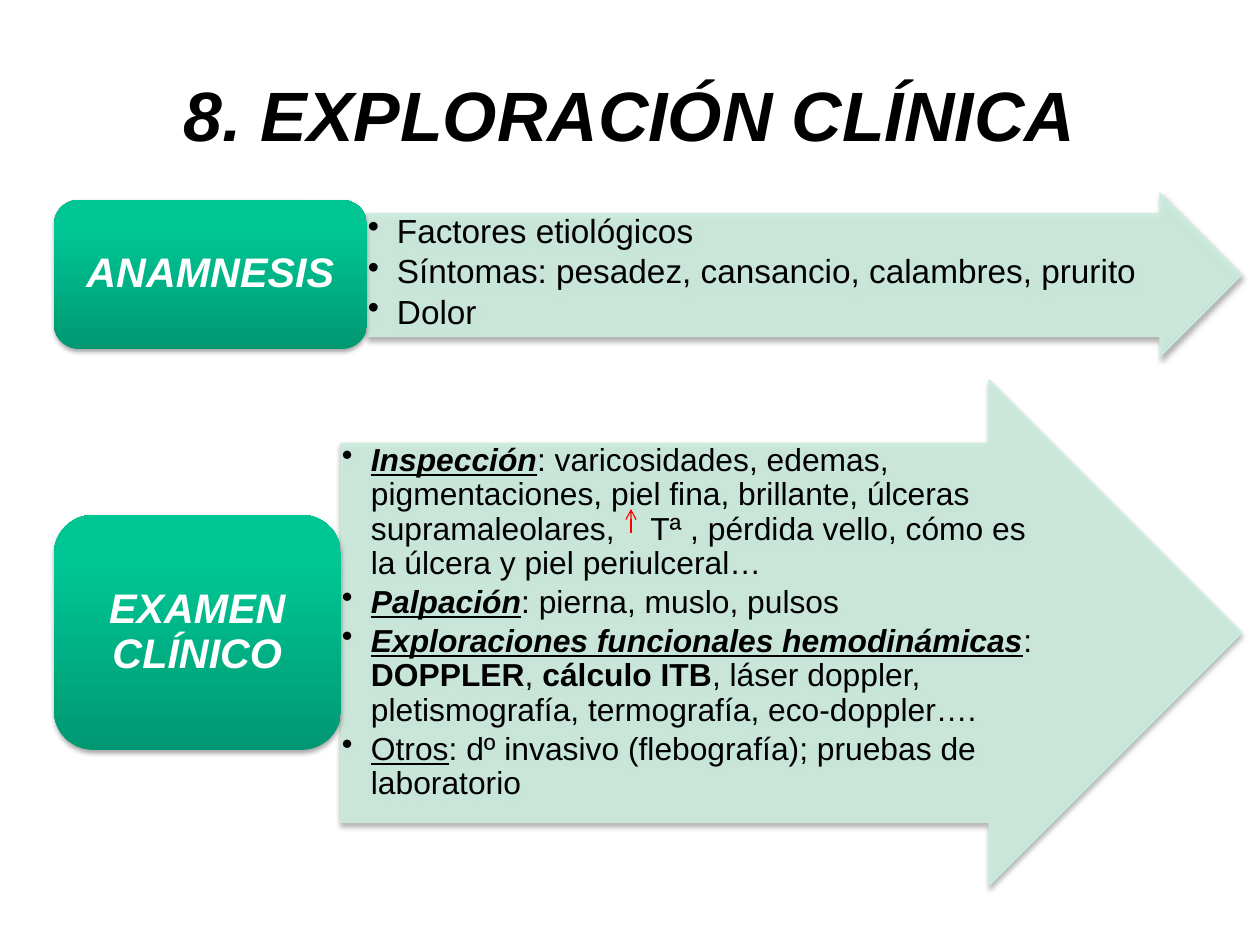
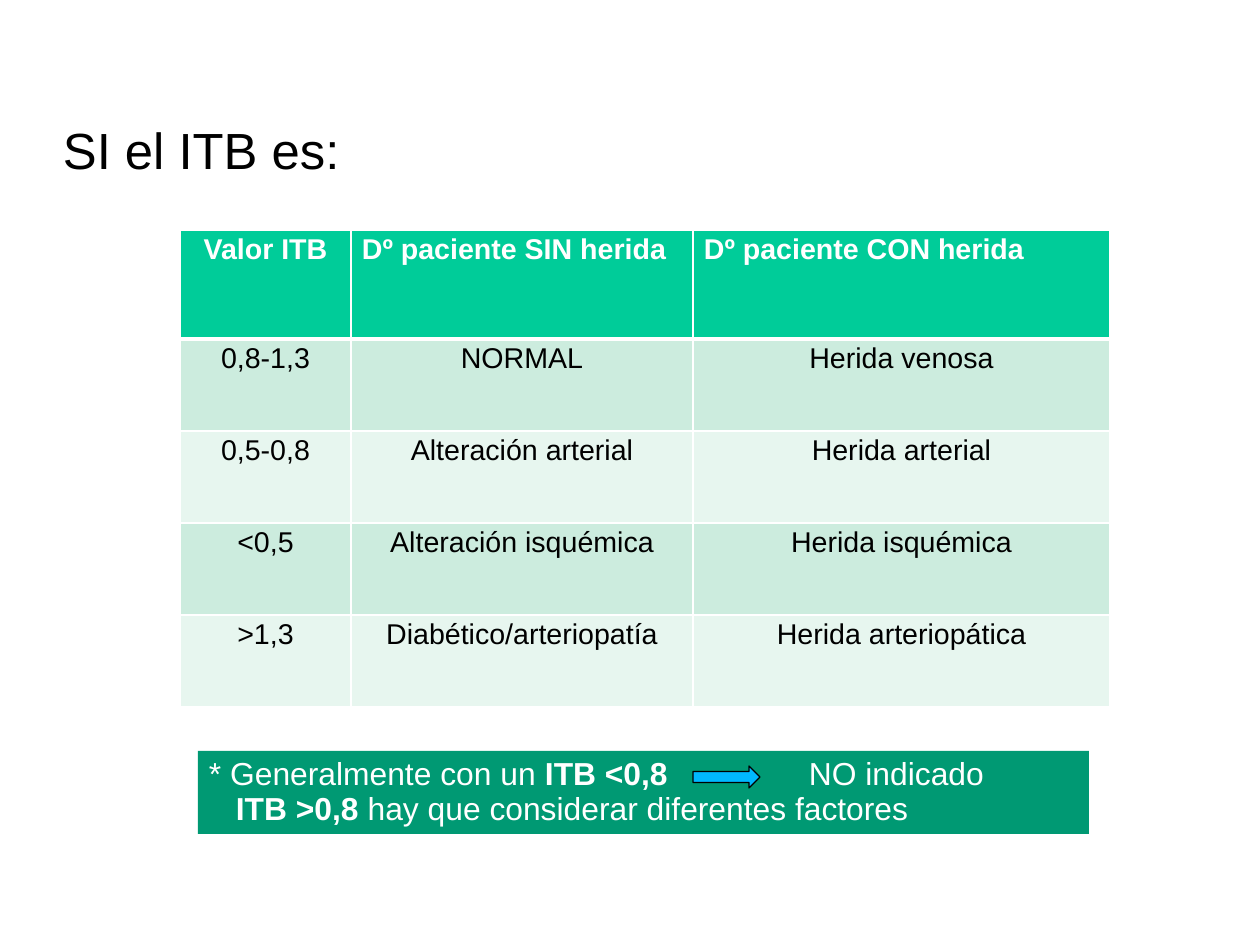
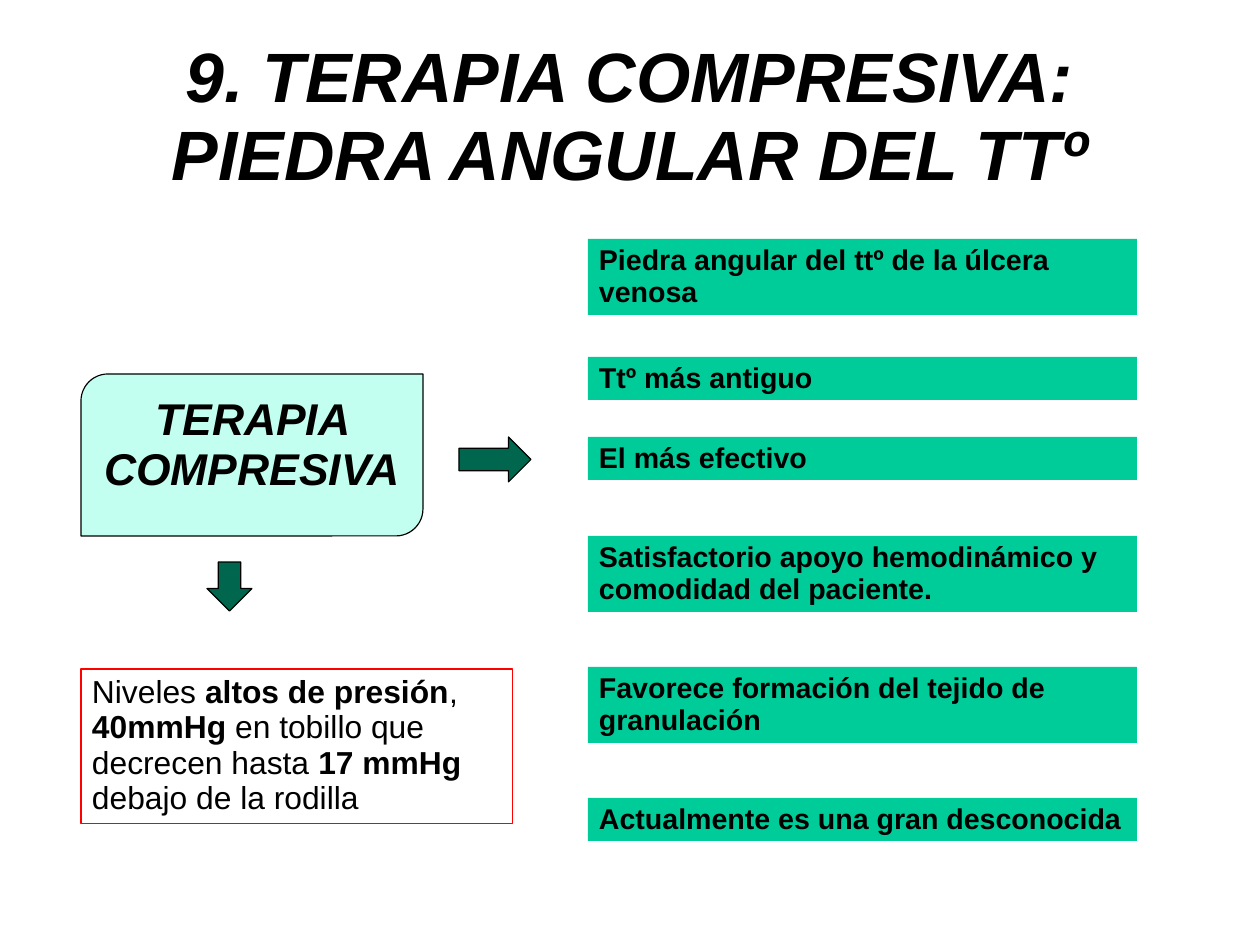
from dataclasses import dataclass

from lxml import etree
from pptx import Presentation
from pptx import util as u
from pptx.dml.color import RGBColor
from pptx.enum import shapes, text
from pptx.oxml import parse_xml
from pptx.oxml.ns import nsdecls, qn

PX = 8000  # EMU in one px
KIND = shapes.MSO_SHAPE
ALIGN = text.PP_ALIGN
ANCHOR = text.MSO_ANCHOR


@dataclass(frozen=True)
class Theme:
    font: str = "Arial"
    black: str = "000000"
    white: str = "FFFFFF"
    red: str = "FF0000"
    green: str = "00CC99"
    deep_green: str = "009973"
    dark_green: str = "00664D"
    mint: str = "CCECDE"
    pale_mint: str = "E7F6EF"
    aqua: str = "C2FFF0"
    blue: str = "00B8FF"
    gradient: tuple = ((0, "009872"), (80, "00C694"), (100, "00C795"))
    title_size: int = 44
    heading_size: int = 32
    label_size: int = 28
    badge_size: int = 26
    lead_size: int = 21
    body_size: int = 20
    small_size: int = 18
    spacing: float = 0.93
    tight_spacing: float = 0.9
    thin: float = 0.75


THEME = Theme()


def px(length):
    return u.Emu(length * PX)


def rgb(colour):
    return RGBColor.from_string(colour)


def add_xml(parent, tag, **attributes):
    return etree.SubElement(parent, qn(tag), {k: str(v) for k, v in attributes.items()})


class Deck:
    def __init__(self, theme, width, height):
        self.theme = theme
        self.presentation = Presentation()
        self.presentation.slide_width = px(width)
        self.presentation.slide_height = px(height)
        self.slide = None

    def new_slide(self):
        self.slide = self.presentation.slides.add_slide(self.presentation.slide_layouts[6])

    def fill_text(self, frame, paragraphs, size, colour=None, bold=None, italic=None,
                  align=ALIGN.LEFT, anchor=ANCHOR.TOP, insets=(11, 6, 11, 6), spacing=None,
                  after=0, bullet=0, indents=(), tab=0):
        """Fill a frame; a paragraph is a string or (text, marks) runs, marks from b, i, u
        and w (a wide space)."""
        frame.word_wrap = True
        frame.vertical_anchor = anchor
        (frame.margin_left, frame.margin_top,
         frame.margin_right, frame.margin_bottom) = map(px, insets)
        for index, runs in enumerate(paragraphs):
            paragraph = frame.paragraphs[0] if index == 0 else frame.add_paragraph()
            paragraph.alignment = align
            paragraph.line_spacing = spacing or self.theme.spacing
            paragraph.space_before = u.Pt(0)
            paragraph.space_after = u.Pt(after)
            properties = paragraph._p.get_or_add_pPr()
            if bullet:
                properties.set("marL", str(px(bullet)))
                properties.set("indent", str(px(-bullet)))
                add_xml(properties, "a:buChar", char="•")
            elif indents:
                properties.set("marL", str(px(indents[index])))
            if tab:
                add_xml(add_xml(properties, "a:tabLst"), "a:tab", pos=px(tab), algn="l")
            font = paragraph.font
            font.name, font.size = self.theme.font, u.Pt(size)
            font.bold, font.italic = bold, italic
            font.color.rgb = rgb(colour or self.theme.black)
            for words, marks in [(runs, "")] if isinstance(runs, str) else runs:
                run = paragraph.add_run()
                run.text = words
                if "b" in marks:
                    run.font.bold = True
                if "i" in marks:
                    run.font.italic = True
                if "u" in marks:
                    run.font.underline = True
                if "w" in marks:
                    run._r.get_or_add_rPr().set("spc", "1670")

    def text_box(self, box, paragraphs, size, **style):
        shape = self.slide.shapes.add_textbox(*map(px, box))
        self.fill_text(shape.text_frame, paragraphs, size, **style)

    def title(self, words):
        self.text_box((63, 38, 1134, 158), [words], self.theme.title_size, bold=True,
                      italic=True, align=ALIGN.CENTER, anchor=ANCHOR.MIDDLE,
                      insets=(0, 2, 0, 0))

    def shape(self, kind, box, fill=None, line=None, adjustments=()):
        shape = self.slide.shapes.add_shape(kind, *map(px, box))
        shape.shadow.inherit = False
        for index, value in enumerate(adjustments):
            shape.adjustments[index] = value
        if fill:
            shape.fill.solid()
            shape.fill.fore_color.rgb = rgb(fill)
        else:
            shape.fill.background()
        if line:
            shape.line.color.rgb = rgb(line)
            shape.line.width = u.Pt(self.theme.thin)
        else:
            shape.line.fill.background()
        return shape

    def panel(self, box, paragraphs, size, fill=None, line=None, **style):
        shape = self.shape(KIND.RECTANGLE, box, fill, line)
        self.fill_text(shape.text_frame, paragraphs, size, **style)

    def cast_shadow(self, shape):
        effects = shape._element.spPr.find(qn("a:effectLst"))
        shadow = add_xml(effects, "a:outerShdw", blurRad=u.Pt(3.1), dist=u.Pt(1.8),
                         dir=5400000, rotWithShape=0)
        colour = add_xml(shadow, "a:srgbClr", val=self.theme.black)
        add_xml(colour, "a:alpha", val=35000)

    def list_arrow(self, box, paragraphs, size):
        """Translucent arrow whose shaft holds a bulleted list."""
        mint = self.theme.mint
        arrow = self.shape(KIND.RIGHT_ARROW, box, mint, mint, (0.75, 0.5))
        for colour in arrow._element.spPr.iter(qn("a:srgbClr")):
            add_xml(colour, "a:alpha", val=90000)
        self.cast_shadow(arrow)
        self.fill_text(arrow.text_frame, paragraphs, size, insets=(1, 1, 1, 1),
                       spacing=self.theme.tight_spacing, after=3, bullet=29)

    def badge(self, box, words):
        """Rounded label with a vertical gradient."""
        badge = self.shape(KIND.ROUNDED_RECTANGLE, box)
        badge.fill.gradient()
        badge.fill.gradient_angle = 90
        stops = badge._element.spPr.find(".//" + qn("a:gsLst"))
        for stop in list(stops):
            stops.remove(stop)
        for position, colour in self.theme.gradient:
            stop = add_xml(stops, "a:gs", pos=position * 1000)
            add_xml(stop, "a:srgbClr", val=colour)
        self.cast_shadow(badge)
        self.fill_text(badge.text_frame, [words], self.theme.badge_size, self.theme.white,
                       bold=True, italic=True, align=ALIGN.CENTER, anchor=ANCHOR.MIDDLE,
                       spacing=self.theme.tight_spacing)

    def line_arrow(self, start, end, colour):
        line = self.slide.shapes.add_connector(shapes.MSO_CONNECTOR.STRAIGHT,
                                               *map(px, start + end))
        line.line.color.rgb = rgb(colour)
        line.line.width = u.Pt(self.theme.thin)
        properties = line._element.spPr
        add_xml(properties.find(qn("a:ln")), "a:tailEnd", type="arrow")
        add_xml(properties, "a:effectLst")

    def table(self, left, top, widths, heights, rows):
        theme = self.theme
        frame = self.slide.shapes.add_table(len(rows), len(widths), *map(
            px, (left, top, sum(widths), sum(heights))))
        table = frame.table
        table.horz_banding = False
        for column, width in zip(table.columns, widths):
            column.width = px(width)
        for r, values in enumerate(rows):
            table.rows[r].height = px(heights[r])
            header = r == 0
            fill = theme.green if header else theme.mint if r % 2 else theme.pale_mint
            for c, value in enumerate(values):
                cell = table.cell(r, c)
                cell.fill.solid()
                cell.fill.fore_color.rgb = rgb(fill)
                self.border(cell, top=3 if r == 1 else 1, bottom=3 if header else 1)
                self.fill_text(cell.text_frame, [value], theme.small_size,
                               theme.white if header else theme.black, bold=header,
                               align=ALIGN.LEFT if header and c else ALIGN.CENTER)
                cell.margin_left = cell.margin_right = px(11)
                cell.margin_top = cell.margin_bottom = px(6)

    def border(self, cell, top, bottom):
        properties = cell._tc.get_or_add_tcPr()
        sides = (("L", 1), ("R", 1), ("T", top), ("B", bottom))
        for index, (side, width) in enumerate(sides):
            properties.insert(index, parse_xml(
                f'<a:ln{side} {nsdecls("a")} w="{u.Pt(width)}"><a:solidFill>'
                f'<a:srgbClr val="{self.theme.white}"/></a:solidFill></a:ln{side}>'))


def clinical_examination(deck):
    theme = deck.theme
    deck.new_slide()
    deck.title("8. EXPLORACIÓN CLÍNICA")
    deck.list_arrow((367, 193, 875, 164), [
        "Factores etiológicos",
        "Síntomas: pesadez, cansancio, calambres, prurito",
        "Dolor",
    ], theme.lead_size)
    deck.badge((54, 200, 313, 149), "ANAMNESIS")
    deck.list_arrow((341, 380, 901, 506), [
        [("Inspección", "biu"),
         (": varicosidades, edemas, pigmentaciones, piel fina, brillante, úlceras "
          "supramaleolares,", ""), (" ", "w"),
         ("Tª , pérdida vello, cómo es la úlcera y piel periulceral…", "")],
        [("Palpación", "biu"), (": pierna, muslo, pulsos", "")],
        [("Exploraciones funcionales hemodinámicas", "biu"), (": ", ""), ("DOPPLER", "b"),
         (", ", ""), ("cálculo ITB", "b"),
         (", láser doppler, pletismografía, termografía, eco-doppler….", "")],
        [("Otros", "u"), (": dº invasivo (flebografía); pruebas de laboratorio", "")],
    ], theme.body_size)
    deck.badge((54, 515, 287, 235), "EXAMEN CLÍNICO")
    deck.line_arrow((631, 533), (631, 509), theme.red)


def index_values(deck):
    theme = deck.theme
    deck.new_slide()
    deck.text_box((63, 121, 1134, 64), ["SI el ITB es:"], theme.heading_size,
                  insets=(0, 3, 0, 0))
    deck.table(180, 230, (171, 342, 417), (109, 92, 92, 92, 92), [
        ("Valor ITB", "Dº paciente SIN herida", "Dº paciente CON herida"),
        ("0,8-1,3", "NORMAL", "Herida venosa"),
        ("0,5-0,8", "Alteración arterial", "Herida arterial"),
        ("<0,5", "Alteración isquémica", "Herida isquémica"),
        (">1,3", "Diabético/arteriopatía", "Herida arteriopática"),
    ])
    deck.panel((198, 751, 891, 83), [
        [("* Generalmente con un ", ""), ("ITB <0,8", "b"), ("\tNO indicado", "")],
        [("ITB >0,8", "b"), (" hay que considerar diferentes factores", "")],
    ], theme.body_size, theme.deep_green, colour=theme.white, indents=(0, 27), tab=600)
    deck.shape(KIND.RIGHT_ARROW, (693, 766, 67, 22), theme.blue, theme.black)


def compression_therapy(deck):
    theme = deck.theme
    deck.new_slide()
    deck.title("9. TERAPIA COMPRESIVA: PIEDRA ANGULAR DEL TTº")
    therapy = deck.shape(KIND.ROUND_2_DIAG_RECTANGLE, (81, 374, 342, 162),
                         theme.aqua, theme.black)
    deck.fill_text(therapy.text_frame, ["TERAPIA COMPRESIVA"], theme.label_size, bold=True,
                   italic=True, align=ALIGN.CENTER, insets=(0, 14, 0, 0))
    for kind, box in ((KIND.RIGHT_ARROW, (459, 437, 72, 45)),
                      (KIND.DOWN_ARROW, (207, 562, 45, 49))):
        deck.shape(kind, box, theme.dark_green, theme.black)
    for top, lines, words in (
        (239, 2, "Piedra angular del ttº de la úlcera venosa"),
        (357, 1, "Ttº más antiguo"),
        (437, 1, "El más efectivo"),
        (536, 2, "Satisfactorio apoyo hemodinámico y comodidad del paciente."),
        (667, 2, "Favorece formación del tejido de granulación"),
        (798, 1, "Actualmente es una gran desconocida"),
    ):
        deck.panel((588, top, 549, 10 + 33 * lines), [words], theme.small_size,
                   theme.green, bold=True)
    deck.panel((81, 669, 432, 155), [
        [("Niveles ", ""), ("altos de presión", "b"), (", ", ""), ("40mmHg", "b"),
         (" en tobillo que decrecen hasta ", ""), ("17 mmHg ", "b"),
         ("debajo de la rodilla", "")],
    ], theme.body_size, line=theme.red)


def main():
    deck = Deck(THEME, 1260, 945)
    clinical_examination(deck)
    index_values(deck)
    compression_therapy(deck)
    deck.presentation.save("out.pptx")


if __name__ == "__main__":
    main()
